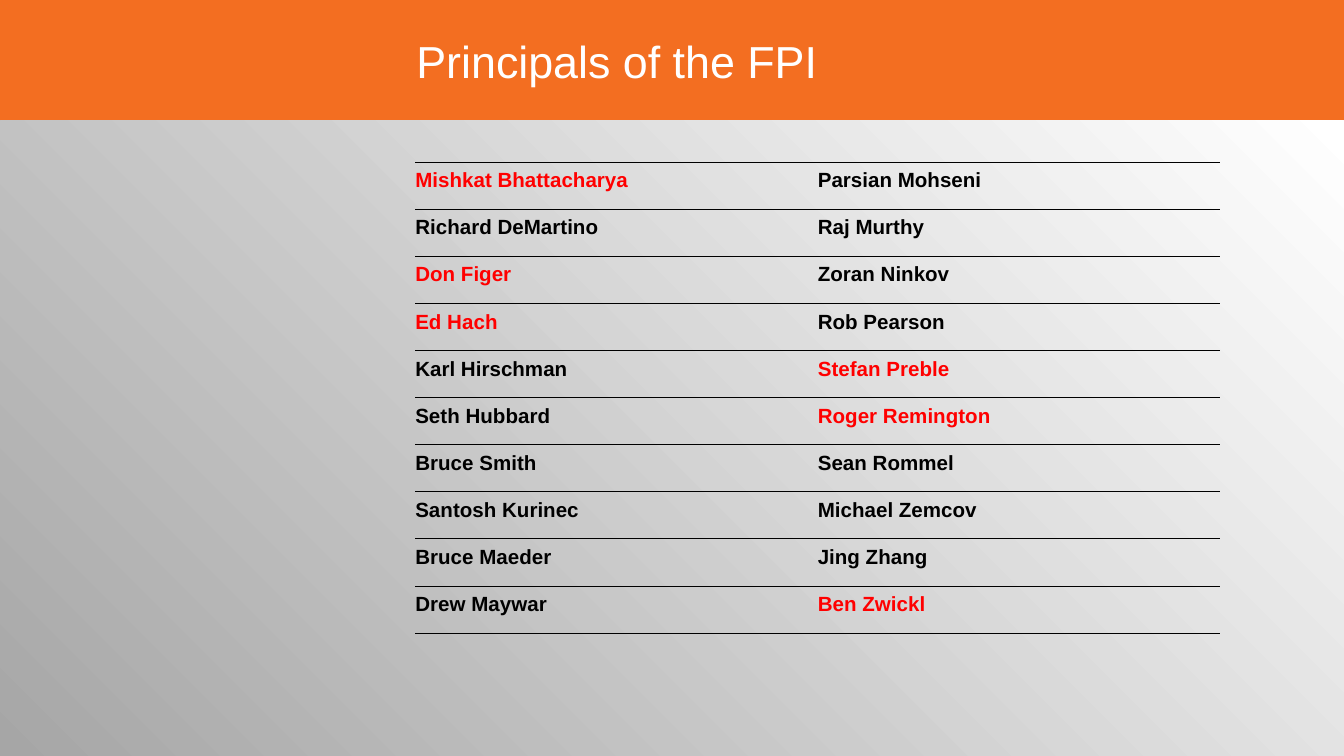
from lxml import etree
from pptx import Presentation
from pptx.dml.color import RGBColor
from pptx.enum.shapes import MSO_SHAPE
from pptx.enum.text import MSO_ANCHOR
from pptx.oxml.ns import qn
from pptx.util import Inches, Pt

RECT = MSO_SHAPE.RECTANGLE
MIDDLE = MSO_ANCHOR.MIDDLE
ORANGE = RGBColor(0xF3, 0x6E, 0x21)
GREY = RGBColor(0xA6, 0xA6, 0xA6)
WHITE = RGBColor(0xFF, 0xFF, 0xFF)
BLACK = RGBColor(0, 0, 0)
RED = RGBColor(0xFF, 0, 0)
WIDTH = 10
HEIGHT = WIDTH * 9 / 16
BAND = 0.9

NAMES = [
    ("Mishkat Bhattacharya", "Parsian Mohseni"),
    ("Richard DeMartino", "Raj Murthy"),
    ("Don Figer", "Zoran Ninkov"),
    ("Ed Hach", "Rob Pearson"),
    ("Karl Hirschman", "Stefan Preble"),
    ("Seth Hubbard", "Roger Remington"),
    ("Bruce Smith", "Sean Rommel"),
    ("Santosh Kurinec", "Michael Zemcov"),
    ("Bruce Maeder", "Jing Zhang"),
    ("Drew Maywar", "Ben Zwickl"),
]
MARKED = {
    "Mishkat Bhattacharya", "Don Figer", "Ed Hach",
    "Stefan Preble", "Roger Remington", "Ben Zwickl",
}


class Deck:
    font = "Arial"

    def __init__(self, width, height):
        self.deck = Presentation()
        self.deck.slide_width = Inches(width)
        self.deck.slide_height = Inches(height)
        self.slide = self.deck.slides.add_slide(self.deck.slide_layouts[6])

    def back(self, color):
        fill = self.slide.background.fill
        fill.solid()
        fill.fore_color.rgb = color

    def panel(self, box, start, end, angle):
        shape = self.slide.shapes.add_shape(RECT, *map(Inches, box))
        shape.shadow.inherit = False
        shape.line.fill.background()
        shape.fill.gradient()
        shape.fill.gradient_angle = angle
        for stop, color, place in zip(shape.fill.gradient_stops, (start, end), (0, 1)):
            stop.color.rgb = color
            stop.position = place

    def style(self, frame, size, color, bold=False):
        for run in frame.paragraphs[0].runs:
            run.font.name = self.font
            run.font.size = Pt(size)
            run.font.bold = bold
            run.font.color.rgb = color

    def title(self, box, text):
        frame = self.slide.shapes.add_textbox(*map(Inches, box)).text_frame
        frame.word_wrap = True
        frame.vertical_anchor = MIDDLE
        frame.text = text
        self.style(frame, 24, WHITE)

    def border(self, cell):
        props = cell._tc.get_or_add_tcPr()
        for side in ("a:lnL", "a:lnR"):
            line = etree.SubElement(props, qn(side), w="0")
            etree.SubElement(line, qn("a:noFill"))
        for side in ("a:lnT", "a:lnB"):
            line = etree.SubElement(props, qn(side), w=str(Pt(0.5)))
            fill = etree.SubElement(line, qn("a:solidFill"))
            etree.SubElement(fill, qn("a:srgbClr"), val=str(BLACK))

    def table(self, box, rows, marked):
        shape = self.slide.shapes.add_table(len(rows), len(rows[0]), *map(Inches, box))
        table = shape.table
        table.first_row = False
        table.horz_banding = False
        for r, row in enumerate(rows):
            for c, name in enumerate(row):
                cell = table.cell(r, c)
                self.border(cell)
                cell.fill.background()
                cell.margin_left = 0
                cell.text_frame.text = name
                self.style(cell.text_frame, 11, RED if name in marked else BLACK, True)

    def save(self):
        self.deck.save("out.pptx")


def main():
    deck = Deck(WIDTH, HEIGHT)
    deck.back(ORANGE)
    deck.panel((0, BAND, WIDTH, HEIGHT - BAND), GREY, WHITE, 45)
    deck.title((3, 0, 6, BAND), "Principals of the FPI")
    deck.table((3.09, 1.21, 5.99, 3.5), NAMES, MARKED)
    deck.save()


if __name__ == "__main__":
    main()
